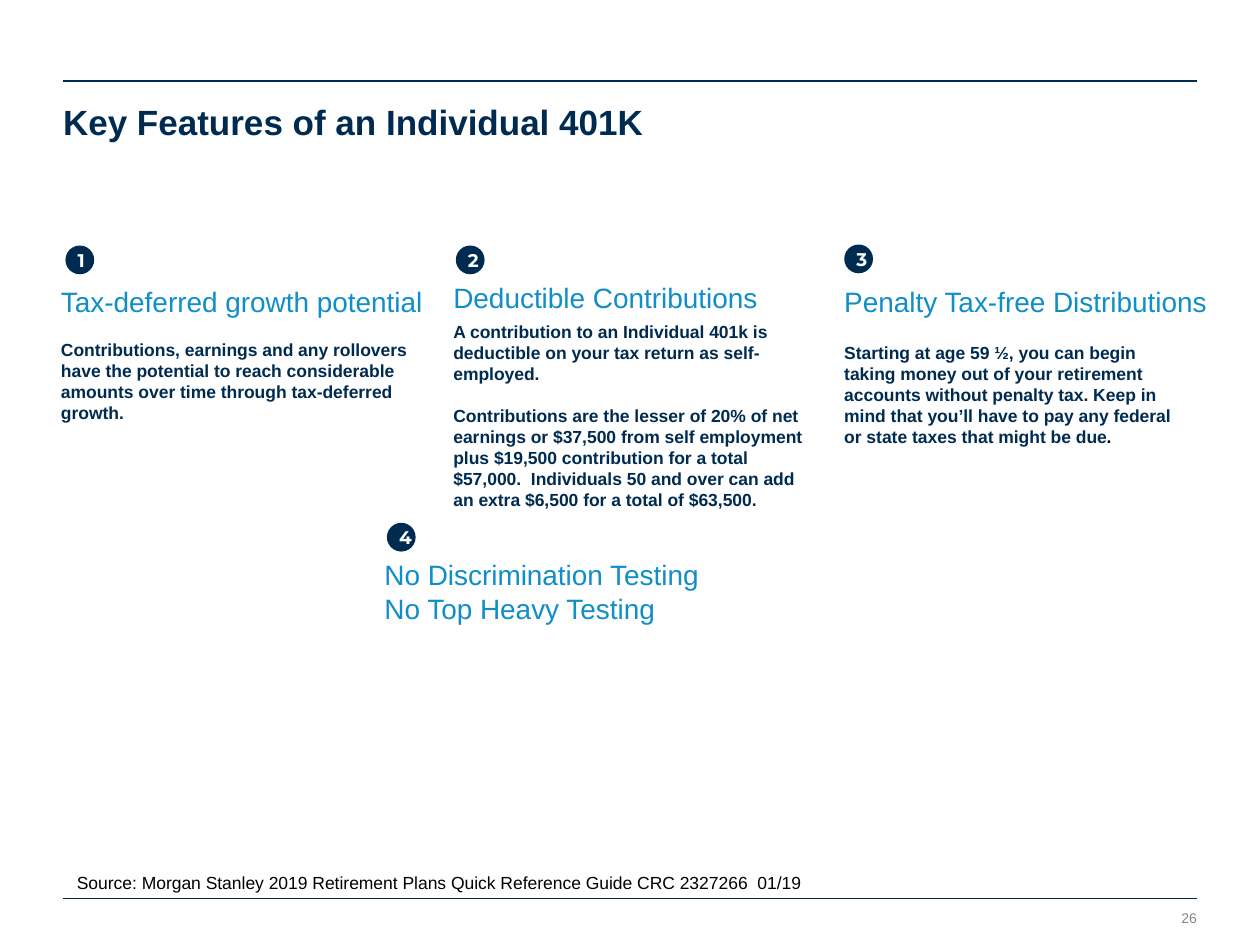
from lxml.etree import SubElement
from pptx import Presentation
from pptx.dml.color import RGBColor
from pptx.enum.shapes import MSO_CONNECTOR, MSO_SHAPE
from pptx.enum.text import MSO_ANCHOR, MSO_AUTO_SIZE, PP_ALIGN
from pptx.oxml.ns import qn
from pptx.util import Cm, Pt

NAVY = RGBColor(0x00, 0x2B, 0x51)
BLUE = RGBColor(0x0F, 0x8E, 0xC7)
GREY = RGBColor(0x86, 0x86, 0x86)
BLACK = RGBColor(0x00, 0x00, 0x00)
WHITE = RGBColor(0xFF, 0xFF, 0xFF)

TITLE = dict(name="Arial", size=Pt(20), bold=True, color=NAVY)
HEADING = dict(name="Arial", size=Pt(16), bold=False, color=BLUE)
BODY = dict(name="Arial", size=Pt(10), bold=True, color=NAVY)
BODY_END = dict(BODY, color=BLACK)
NUMBER = dict(name="Montserrat", size=Pt(10.5), bold=True, color=WHITE)
SOURCE = dict(name="Arial", size=Pt(10), bold=False, color=BLACK)
PAGE = dict(name="Arial", size=Pt(8), bold=False, color=GREY)

MARGIN = 1.27
CONTENT_WIDTH = 22.86
DOT = 0.58

FEATURES = [
    dict(box=(1.23, 4.95, 7.39), dot_dx=0.09, heading_dy=0.79, body_dy=1.88, body_width=7.11,
         heading=["Tax-deferred growth potential"],
         body=["Contributions, earnings and any rollovers have the potential to reach "
               "considerable amounts over time through tax-deferred growth."]),
    dict(box=(9.14, 4.95, 7.11), dot_dx=0.05, heading_dy=0.71, body_dy=1.52, body_width=7.11,
         heading=["Deductible Contributions"],
         body=["A contribution to an Individual 401k is deductible on your tax return "
               "as self-employed.",
               "Contributions are the lesser of 20% of net earnings or $37,500 from self "
               "employment plus $19,500 contribution for a total $57,000.  Individuals 50 "
               "and over can add an extra $6,500 for a total of $63,500."]),
    dict(box=(17.02, 4.93, 7.44), dot_dx=0, heading_dy=0.81, body_dy=1.96, body_width=6.81,
         heading=["Penalty Tax-free Distributions"],
         body=["Starting at age 59 ½, you can begin taking money out of your retirement "
               "accounts without penalty tax. Keep in mind that you’ll have to pay any "
               "federal or state taxes that might be due"],
         end="."),
    dict(box=(7.75, 10.54, 9.04), dot_dx=0.05, heading_dy=0.71,
         heading=["No Discrimination Testing", "No Top Heavy Testing"]),
]


def add_run(p, text, style):
    r = p.add_run()
    r.text = text
    for key, value in style.items():
        if key == "color":
            r.font.color.rgb = value
        else:
            setattr(r.font, key, value)


def fill_frame(tf, lines, style, align=PP_ALIGN.LEFT, leading=None, gap=0):
    for i, line in enumerate(lines):
        p = tf.add_paragraph() if i else tf.paragraphs[0]
        p.alignment = align
        if leading:
            p.line_spacing = Pt(leading)
        if i and gap:
            p.space_before = Pt(gap)
        add_run(p, line, style)


def set_frame(tf, wrap=True):
    frame = dict(margin_left=0, margin_top=0, margin_right=0, margin_bottom=0,
                 word_wrap=wrap, auto_size=MSO_AUTO_SIZE.NONE,
                 vertical_anchor=MSO_ANCHOR.TOP)
    for key, value in frame.items():
        setattr(tf, key, value)


def add_text(s, box, lines, style, wrap=True, **layout):
    tf = s.shapes.add_textbox(*map(Cm, box)).text_frame
    set_frame(tf, wrap)
    fill_frame(tf, lines, style, **layout)
    return tf


def add_rule(s, left, top, width, weight):
    line = s.shapes.add_connector(MSO_CONNECTOR.STRAIGHT, Cm(left), Cm(top),
                                  Cm(left + width), Cm(top))
    line.line.color.rgb = NAVY
    line.line.width = Pt(weight)
    SubElement(line._element.spPr, qn("a:effectLst"))


def add_header(s, left, top, width):
    add_rule(s, left, top, width, 1)
    sp = s.shapes.title
    place = dict(left=Cm(left), top=Cm(top + 0.4), width=Cm(width), height=Cm(0.86))
    for key, value in place.items():
        setattr(sp, key, value)
    set_frame(sp.text_frame)
    fill_frame(sp.text_frame, ["Key Features of an Individual 401K"], TITLE)


def add_feature(s, number, box, dot_dx, heading_dy, heading,
                body=(), body_dy=0, body_width=0, end=""):
    left, top, width = box
    sp = s.shapes.add_shape(MSO_SHAPE.OVAL, Cm(left + dot_dx), Cm(top), Cm(DOT), Cm(DOT))
    sp.shadow.inherit = False
    sp.fill.solid()
    sp.fill.fore_color.rgb = NAVY
    sp.line.fill.background()
    sp.text_frame.vertical_anchor = MSO_ANCHOR.MIDDLE
    fill_frame(sp.text_frame, [str(number)], NUMBER, align=PP_ALIGN.CENTER)

    add_text(s, (left, top + heading_dy, width, 0.69 * len(heading)), heading, HEADING)
    if body:
        tf = add_text(s, (left, top + body_dy, body_width, 2), body, BODY,
                      leading=12, gap=12)
        if end:
            add_run(tf.paragraphs[-1], end, BODY_END)


def add_footer(s, left, top, width):
    source = "Source: Morgan Stanley 2019 Retirement Plans Quick Reference Guide CRC 2327266  01/19"
    add_text(s, (left + 0.28, top - 0.53, 14.71, 0.43), [source], SOURCE, wrap=False)
    add_rule(s, left, top, width, 0.5)
    add_text(s, (left + width - 1, top + 0.23, 1, 0.33), ["26"], PAGE, align=PP_ALIGN.RIGHT)


def main():
    prs = Presentation()
    prs.slide_width, prs.slide_height = Cm(25.4), Cm(19.05)
    s = prs.slides.add_slide(prs.slide_layouts[5])
    add_header(s, MARGIN, 1.63, CONTENT_WIDTH)
    for number, feature in enumerate(FEATURES, 1):
        add_feature(s, number, **feature)
    add_footer(s, MARGIN, 18.11, CONTENT_WIDTH)
    prs.save("out.pptx")


if __name__ == "__main__":
    main()
